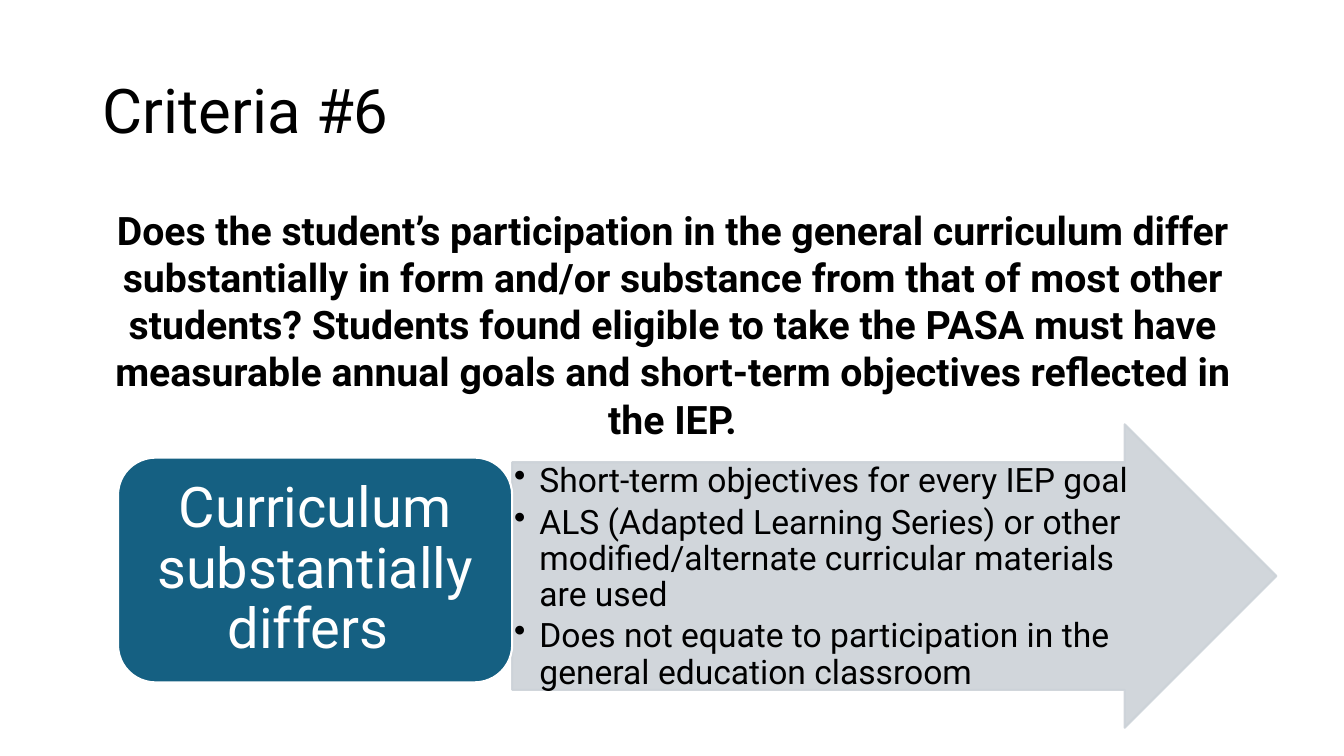
from lxml import etree
from pptx import Presentation
from pptx.dml.color import RGBColor
from pptx.enum.shapes import MSO_SHAPE
from pptx.enum.text import MSO_ANCHOR, MSO_AUTO_SIZE, PP_ALIGN
from pptx.oxml.ns import qn
from pptx.util import Inches, Pt

ARROW = MSO_SHAPE.RIGHT_ARROW
ROUND = MSO_SHAPE.ROUNDED_RECTANGLE
TOP, MIDDLE = MSO_ANCHOR.TOP, MSO_ANCHOR.MIDDLE
LEFT, CENTER = PP_ALIGN.LEFT, PP_ALIGN.CENTER
FIXED = MSO_AUTO_SIZE.NONE

BLACK, WHITE, BLUE, GRAY = "000000", "FFFFFF", "156082", "CCD2D8"
POINTS = [
    "Short-term objectives for every IEP goal",
    "ALS (Adapted Learning Series) or other modified/alternate curricular materials are used",
    "Does not equate to participation in the general education classroom",
]


def rgb(code):
    return RGBColor.from_string(code)


def write(shape, lines, size, color, align, anchor, inset, space=0.9, after=0, bold=False):
    """Fill a shape with styled paragraphs; inset is (side, top and bottom) in inches."""
    frame = shape.text_frame
    frame.text = "\n".join(lines)
    frame.word_wrap = True
    frame.auto_size = FIXED
    frame.vertical_anchor = anchor
    frame.margin_left = frame.margin_right = Inches(inset[0])
    frame.margin_top = frame.margin_bottom = Inches(inset[1])
    for para in frame.paragraphs:
        para.alignment = align
        para.line_spacing = space
        para.space_after = Pt(after)
        for run in para.runs:
            run.font.name = "Roboto"
            run.font.size = Pt(size)
            run.font.bold = bold
            run.font.color.rgb = rgb(color)


deck = Presentation()
deck.slide_width, deck.slide_height = Inches(13.33), Inches(7.5)
slide = deck.slides.add_slide(deck.slide_layouts[5])
shapes = slide.shapes

title = shapes.title
title.left, title.top = Inches(0.92), Inches(0.4)
title.width, title.height = Inches(11.5), Inches(1.45)
write(title, ["Criteria #6"], 44, BLACK, LEFT, MIDDLE, (0.1, 0.05))

question = shapes.add_textbox(Inches(0.92), Inches(2), Inches(11.5), Inches(2.45))
write(question, [
    "Does the student’s participation in the general curriculum differ substantially "
    "in form and/or substance from that of most other students? Students found eligible "
    "to take the PASA must have measurable annual goals and short-term objectives "
    "reflected in the IEP."
], 28, BLACK, CENTER, TOP, (0.1, 0.05), space=1.0, bold=True)

arrow = shapes.add_shape(ARROW, Inches(5.08), Inches(4.21), Inches(7.58), Inches(3.01))
arrow.adjustments[0], arrow.adjustments[1] = 0.75, 0.5
label = shapes.add_shape(ROUND, Inches(1.17), Inches(4.54), Inches(3.91), Inches(2.23))
for shape, fill, line in ((arrow, GRAY, GRAY), (label, BLUE, WHITE)):
    shape.shadow.inherit = False
    shape.fill.solid()
    shape.fill.fore_color.rgb = rgb(fill)
    shape.line.color.rgb = rgb(line)
    shape.line.width = Pt(1.5)
for color in arrow.fill._xPr.iter(qn("a:srgbClr")):
    etree.SubElement(color, qn("a:alpha"), val="90000")

write(label, ["Curriculum substantially differs "], 40, WHITE, CENTER, MIDDLE, (0.28, 0.19))

points = shapes.add_textbox(Inches(5.08), Inches(4.58), Inches(6.45), Inches(2.26))
write(points, POINTS, 24, BLACK, LEFT, TOP, (0.02, 0.02), after=3.6)
for para in points.text_frame.paragraphs:
    props = para._p.get_or_add_pPr()
    props.set("marL", str(Inches(0.25)))
    props.set("indent", str(-Inches(0.25)))
    etree.SubElement(props, qn("a:buChar"), char="•")

deck.save("out.pptx")
